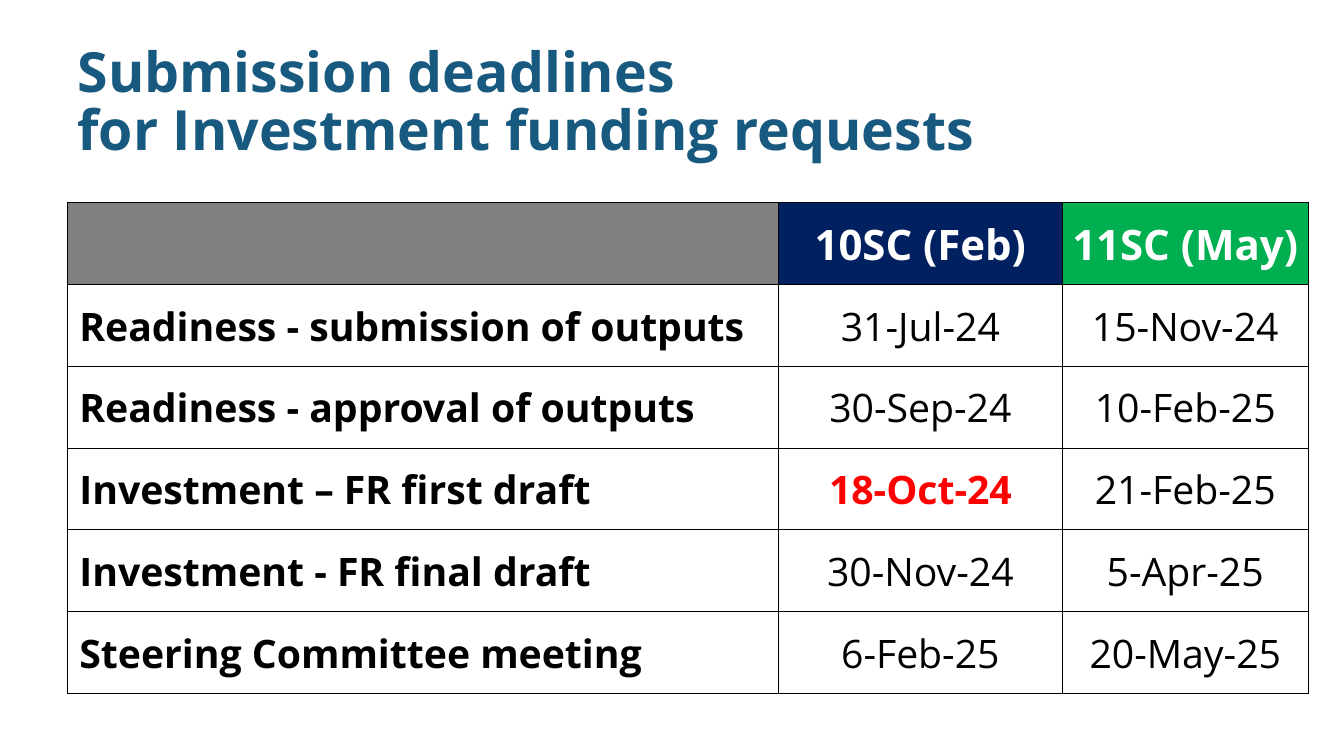
from lxml.etree import SubElement
from pptx import Presentation
from pptx.dml.color import RGBColor as Rgb
from pptx.enum.text import MSO_ANCHOR as Anchor, MSO_AUTO_SIZE as Auto, PP_ALIGN as Align
from pptx.oxml.ns import qn
from pptx.util import Cm, Pt

HUES = {
    "title": "185980",
    "grey": "808080",
    "navy": "002060",
    "green": "00B050",
    "white": "FFFFFF",
    "black": "000000",
    "red": "FF0000",
}
FONT = "Open Sans"
HEADS = [("", "grey"), ("10SC (Feb)", "navy"), ("11SC (May)", "green")]
DATES = [
    ("Readiness - submission of outputs", "31-Jul-24", "15-Nov-24"),
    ("Readiness - approval of outputs", "30-Sep-24", "10-Feb-25"),
    ("Investment – FR first draft", "18-Oct-24", "21-Feb-25"),
    ("Investment - FR final draft", "30-Nov-24", "5-Apr-25"),
    ("Steering Committee meeting", "6-Feb-25", "20-May-25"),
]
URGENT = "18-Oct-24"
SHARES = (17.91, 7.17, 6.18)


def write(frame, text, size=28, hue="black", bold=False, align=Align.LEFT, space=1.0):
    para = frame.paragraphs[0]
    para.text = text
    para.alignment = align
    para.line_spacing = space
    for run in para.runs:
        font = run.font
        font.name = FONT
        font.size = Pt(size)
        font.bold = bold
        font.color.rgb = Rgb.from_string(HUES[hue])


def paint(cell, hue):
    cell.fill.solid()
    cell.fill.fore_color.rgb = Rgb.from_string(HUES[hue])
    props = cell._tc.get_or_add_tcPr()
    for spot, side in enumerate(("lnL", "lnR", "lnT", "lnB")):
        line = SubElement(props, qn(f"a:{side}"), w=str(Pt(0.5)))
        fill = SubElement(line, qn("a:solidFill"))
        SubElement(fill, qn("a:srgbClr"), val=HUES["black"])
        props.insert(spot, line)


def put_title(slide, left, top, width, height):
    title = slide.shapes.title
    title.left, title.top = Cm(left), Cm(top)
    title.width, title.height = Cm(width), Cm(height)
    frame = title.text_frame
    frame.word_wrap = True
    frame.auto_size = Auto.NONE
    frame.vertical_anchor = Anchor.MIDDLE
    write(frame, "Submission deadlines\vfor Investment funding requests",
          size=39.6, hue="title", bold=True, space=0.86)


def put_table(slide, left, top, width, height):
    count = len(DATES) + 1
    frame = slide.shapes.add_table(count, len(HEADS), Cm(left), Cm(top), Cm(width), Cm(height))
    table = frame.table
    table.first_row = table.horz_banding = False
    for col, share in zip(table.columns, SHARES):
        col.width = Cm(width * share / sum(SHARES))
    for row in table.rows:
        row.height = Cm(height / count)
    for cell in table.iter_cells():
        cell.vertical_anchor = Anchor.MIDDLE
        cell.margin_left = cell.margin_right = cell.margin_top = Cm(0.02)
        cell.margin_bottom = 0
    for cell, (text, hue) in zip(table.rows[0].cells, HEADS):
        paint(cell, hue)
        write(cell.text_frame, text, size=30, hue="white", bold=True, align=Align.CENTER)
    for r, texts in enumerate(DATES, 1):
        for c, text in enumerate(texts):
            cell = table.cell(r, c)
            paint(cell, "white")
            if c == 0:
                cell.margin_left = Cm(0.3)
            write(cell.text_frame, text,
                  hue="red" if text == URGENT else "black",
                  bold=c == 0 or text == URGENT,
                  align=Align.CENTER if c else Align.LEFT)


def main():
    deck = Presentation()
    deck.slide_width, deck.slide_height = Cm(33.87), Cm(19.05)
    slide = deck.slides.add_slide(deck.slide_layouts[5])
    put_title(slide, 1.7, 1.04, 30.48, 3.18)
    put_table(slide, 1.7, 5.11, 31.26, 12.36)
    deck.save("out.pptx")


if __name__ == "__main__":
    main()
